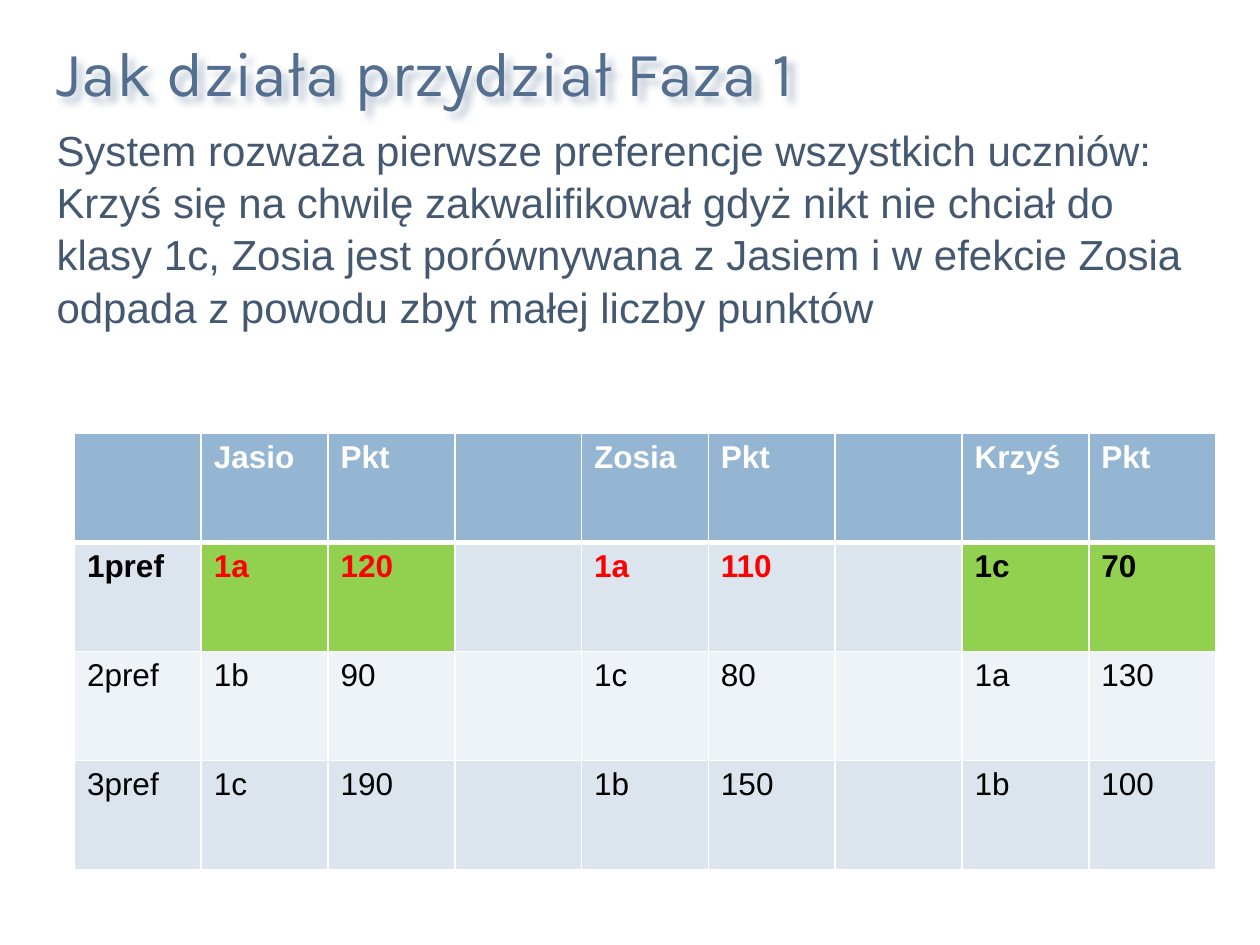
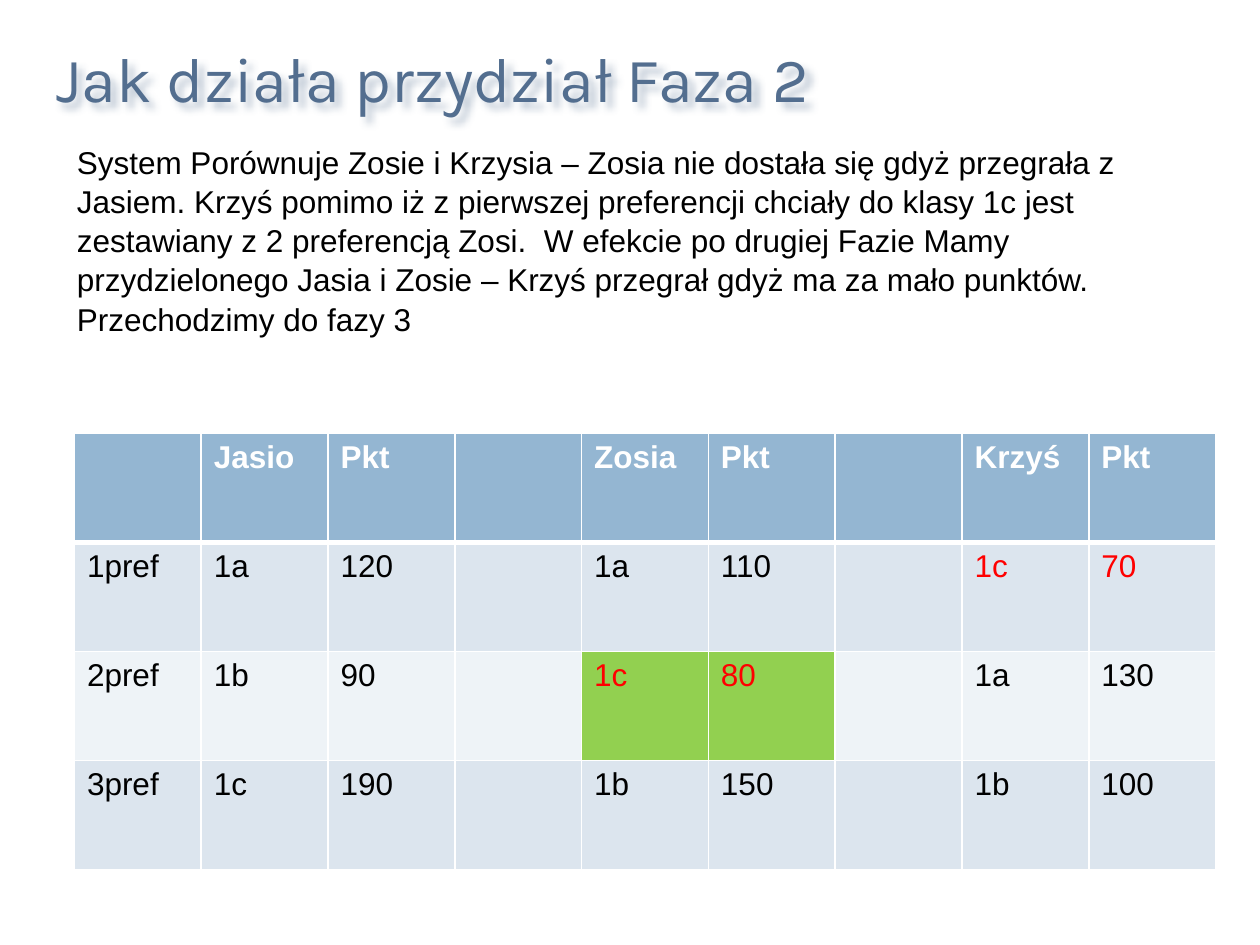
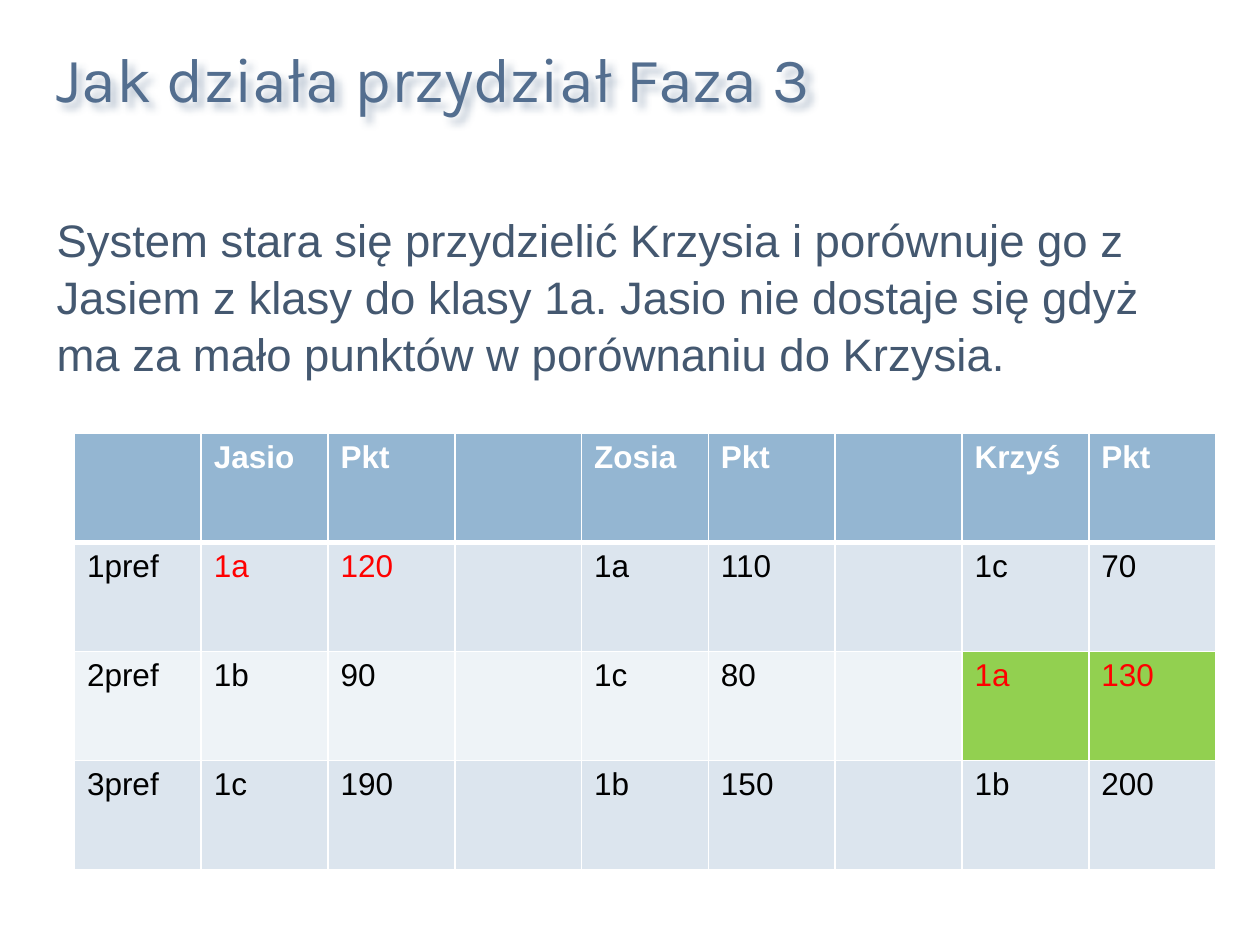
import lxml.etree
import pptx
import pptx.dml.color
import pptx.oxml
import pptx.oxml.ns
import pptx.util

Cm = pptx.util.Cm
Pt = pptx.util.Pt
RGBColor = pptx.dml.color.RGBColor

WHITE = RGBColor(0xFF, 0xFF, 0xFF)
BLACK = RGBColor(0x00, 0x00, 0x00)
RED = RGBColor(0xFF, 0x00, 0x00)
GREEN = RGBColor(0x92, 0xD0, 0x50)
TITLE_BLUE = RGBColor(0x53, 0x6E, 0x8F)
BODY_BLUE = RGBColor(0x44, 0x58, 0x70)
HEADER_BLUE = RGBColor(0x94, 0xB6, 0xD2)
BANDS = (RGBColor(0xDC, 0xE5, 0xEE), RGBColor(0xEE, 0xF3, 0xF7))

TITLE_FONT = "Karla"
BODY_FONT = "Arial"
TABLE_BOX = (Cm(1.5), Cm(8.74), Cm(23.01), Cm(8.79))

HEADER = ["", "Jasio", "Pkt", "", "Zosia", "Pkt", "", "Krzyś", "Pkt"]
PREFERENCES = [
    ["1pref", "1a", "120", "", "1a", "110", "", "1c", "70"],
    ["2pref", "1b", "90", "", "1c", "80", "", "1a", "130"],
    ["3pref", "1c", "190", "", "1b", "150", "", "1b", "100"],
]
# Each pupil's class and points columns
JASIO, ZOSIA, KRZYS = (1, 2), (4, 5), (7, 8)


def add_span(para, text, font, size, color, bold=False):
    span = para.add_run()
    span.text = text
    span.font.name = font
    span.font.size = Pt(size)
    span.font.color.rgb = color
    span.font.bold = bold


def add_text(page, place, text, font, size, color):
    box = page.shapes.add_textbox(*place)
    box.text_frame.word_wrap = True
    add_span(box.text_frame.paragraphs[0], text, font, size, color)
    return box


def add_title(page, top, phase):
    box = add_text(page, (Cm(0.89), top, Cm(19.94), Cm(3.18)),
                   f"Jak działa przydział Faza {phase}", TITLE_FONT, 36, TITLE_BLUE)
    box.text_frame.margin_top = Cm(0.27)
    add_soft_shadow(box, TITLE_BLUE)


def add_soft_shadow(box, color):
    box._element.spPr.append(pptx.oxml.parse_xml(
        f'<a:effectLst {pptx.oxml.ns.nsdecls("a")}>'
        '<a:outerShdw blurRad="50800" dist="50800" dir="2700000" algn="tl" rotWithShape="0">'
        f'<a:srgbClr val="{color}"><a:alpha val="40000"/></a:srgbClr>'
        '</a:outerShdw></a:effectLst>'))


def add_explanation(page, place, text, size, color):
    box = add_text(page, place, text, BODY_FONT, size, color)
    box.text_frame.paragraphs[0].line_spacing = 1.04


def set_borders(cell, top=1, bottom=1):
    """Draw white borders, widths in points; call before the fill is set."""
    qn = pptx.oxml.ns.qn
    properties = cell._tc.get_or_add_tcPr()
    for side, width in (("L", 1), ("R", 1), ("T", top), ("B", bottom)):
        line = lxml.etree.SubElement(properties, qn(f"a:ln{side}"), w=str(Pt(width)))
        fill = lxml.etree.SubElement(line, qn("a:solidFill"))
        lxml.etree.SubElement(fill, qn("a:srgbClr"), val=str(WHITE))


def add_preference_table(page, place, rows, green, red, bold_rows=()):
    """Fill the cells in green and write those in red, given as (row, column)."""
    content = [HEADER] + rows
    table = page.shapes.add_table(len(content), len(HEADER), *place).table
    table.first_row = table.horz_banding = False
    for column in table.columns:
        column.width = place[2] // len(HEADER)
    for number, texts in enumerate(content):
        table.rows[number].height = place[3] // len(content)
        is_header = number == 0
        for column, text in enumerate(texts):
            cell = table.cell(number, column)
            set_borders(cell, top=3 if number == 1 else 1, bottom=3 if is_header else 1)
            position = (number, column)
            if is_header:
                fill, color = HEADER_BLUE, WHITE
            else:
                fill = GREEN if position in green else BANDS[(number - 1) % 2]
                color = RED if position in red else BLACK
            cell.fill.solid()
            cell.fill.fore_color.rgb = fill
            if text:
                add_span(cell.text_frame.paragraphs[0], text, BODY_FONT, 18, color,
                         is_header or number in bold_rows)


def cells(row, *pupils):
    return {(row, column) for pupil in pupils for column in pupil}


def build_phase_one(page):
    add_title(page, Cm(0.41), 1)
    add_explanation(
        page, (Cm(0.89), Cm(2.34), Cm(23.6), Cm(15.19)),
        "System rozważa pierwsze preferencje wszystkich uczniów: Krzyś się na chwilę "
        "zakwalifikował gdyż nikt nie chciał do klasy 1c, Zosia jest porównywana z Jasiem "
        "i w efekcie Zosia odpada z powodu zbyt małej liczby punktów", 24, BODY_BLUE)
    add_preference_table(page, TABLE_BOX, PREFERENCES, green=cells(1, JASIO, KRZYS),
                         red=cells(1, JASIO, ZOSIA), bold_rows=(1,))


def build_phase_two(page):
    add_title(page, Cm(0.53), 2)
    add_preference_table(page, TABLE_BOX, PREFERENCES, green=cells(2, ZOSIA),
                         red=cells(1, KRZYS) | cells(2, ZOSIA))
    add_explanation(
        page, (Cm(1.3), Cm(2.72), Cm(23.19), Cm(4.11)),
        "System Porównuje Zosie i Krzysia – Zosia nie dostała się gdyż przegrała z Jasiem. "
        "Krzyś pomimo iż z pierwszej preferencji chciały do klasy 1c jest zestawiany z 2 "
        "preferencją Zosi.  W efekcie po drugiej Fazie Mamy przydzielonego Jasia i Zosie – "
        "Krzyś przegrał gdyż ma za mało punktów. Przechodzimy do fazy 3", 18, BLACK)


def build_phase_three(page):
    add_title(page, Cm(0.53), 3)
    add_explanation(
        page, (Cm(0.89), Cm(4.11), Cm(23.6), Cm(13.41)),
        "System stara się przydzielić Krzysia i porównuje go z Jasiem z klasy do klasy 1a. "
        "Jasio nie dostaje się gdyż ma za mało punktów w porównaniu do Krzysia.",
        26, BODY_BLUE)
    rows = PREFERENCES[:2] + [PREFERENCES[2][:-1] + ["200"]]
    add_preference_table(page, TABLE_BOX, rows, green=cells(2, KRZYS),
                         red=cells(1, JASIO) | cells(2, KRZYS))


def main():
    deck = pptx.Presentation()
    deck.slide_width, deck.slide_height = Cm(25.4), Cm(19.05)
    for build in (build_phase_one, build_phase_two, build_phase_three):
        build(deck.slides.add_slide(deck.slide_layouts[6]))
    deck.save("out.pptx")


if __name__ == "__main__":
    main()
